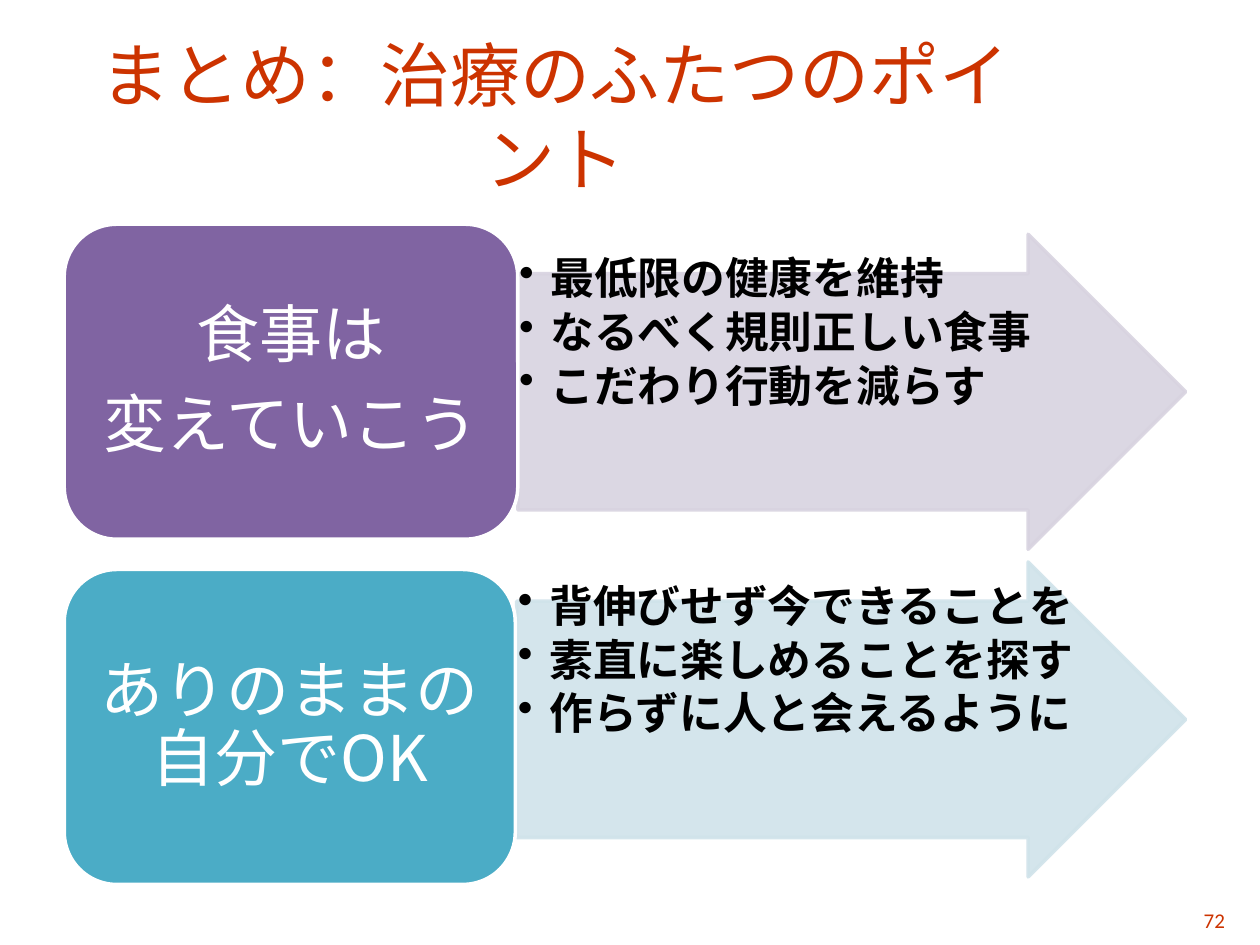
from dataclasses import dataclass

import lxml.etree
import pptx
import pptx.dml.color
import pptx.enum.shapes
import pptx.enum.text
import pptx.oxml.ns
import pptx.util

W, H = 10, 7.5
ALIGN = pptx.enum.text.PP_ALIGN
ANCHOR = pptx.enum.text.MSO_ANCHOR
SHAPE = pptx.enum.shapes.MSO_SHAPE
qn = pptx.oxml.ns.qn


@dataclass(frozen=True)
class Theme:
    accent: str = "CC3300"
    white: str = "FFFFFF"
    black: str = "000000"
    latin: str = "Calibri"
    japanese: str = "Noto Sans CJK JP"
    title: int = 40
    label: int = 36
    bullet: int = 25
    number: int = 12
    line: int = 2
    spacing: float = 0.9


@dataclass(frozen=True)
class Box:
    x: float
    y: float
    w: float
    h: float

    def emu(self) -> list:
        shares = (self.x * W, self.y * H, self.w * W, self.h * H)
        return [pptx.util.Inches(v) for v in shares]


@dataclass(frozen=True)
class Point:
    label: str
    bullets: tuple
    fill: str
    tint: str
    label_box: Box
    arrow_box: Box


T = Theme()
ROW = 2.5 / H
POINTS = (
    Point("食事は\n変えていこう",
          ("最低限の健康を維持", "なるべく規則正しい食事", "こだわり行動を減らす"),
          "8064A2", "D8D3E0",
          Box(0.051, 1.78 / H, 0.36, ROW), Box(0.411, 1.86 / H, 0.53, ROW)),
    Point("ありのままの自分でOK",
          ("背伸びせず今できることを", "素直に楽しめることを探す", "作らずに人と会えるように"),
          "4BACC6", "D0E3EA",
          Box(0.051, 4.52 / H, 0.358, ROW), Box(0.41, 4.46 / H, 0.531, ROW)),
)


def rgb(color: str) -> pptx.dml.color.RGBColor:
    return pptx.dml.color.RGBColor.from_string(color)


def set_insets(tf, side: float, top: float, bottom: float) -> None:
    tf.margin_left = tf.margin_right = pptx.util.Inches(side)
    tf.margin_top = pptx.util.Inches(top)
    tf.margin_bottom = pptx.util.Inches(bottom)


def write(tf, text: str, size: int, color: str, font: str, align,
          anchor, bold: bool = False, after: float = 0,
          spacing: float = 1) -> None:
    tf.text = text
    tf.word_wrap = True
    tf.vertical_anchor = anchor
    for p in tf.paragraphs:
        p.alignment = align
        p.line_spacing = spacing
        p.space_before = pptx.util.Pt(0)
        p.space_after = pptx.util.Pt(after * size)
        for r in p.runs:
            r.font.size = pptx.util.Pt(size)
            r.font.name = font
            r.font.bold = bold
            r.font.color.rgb = rgb(color)


def add_block(s, kind, box: Box, fill: str, line: str):
    sp = s.shapes.add_shape(kind, *box.emu())
    sp.shadow.inherit = False
    sp.fill.solid()
    sp.fill.fore_color.rgb = rgb(fill)
    sp.line.color.rgb = rgb(line)
    sp.line.width = pptx.util.Pt(T.line)
    return sp


def add_arrow(s, point: Point) -> None:
    sp = add_block(s, SHAPE.RIGHT_ARROW, point.arrow_box, point.tint, point.tint)
    sp.adjustments[0], sp.adjustments[1] = 0.75, 0.5
    for color in sp._element.spPr.iter(qn("a:srgbClr")):
        lxml.etree.SubElement(color, qn("a:alpha"), val="90000")


def add_bullets(s, point: Point) -> None:
    tf = s.shapes.add_textbox(*point.arrow_box.emu()).text_frame
    set_insets(tf, 0.01, 0.18, 0.01)
    write(tf, "\n".join(point.bullets), T.bullet, T.black, T.japanese,
          ALIGN.LEFT, ANCHOR.TOP, bold=True, after=0.15, spacing=T.spacing)
    indent = pptx.util.Inches(0.25)
    for p in tf.paragraphs:
        pPr = p._p.get_or_add_pPr()
        pPr.set("marL", str(indent))
        pPr.set("indent", str(-indent))
        lxml.etree.SubElement(pPr, qn("a:buChar"), char="•")


def add_label(s, point: Point) -> None:
    sp = add_block(s, SHAPE.ROUNDED_RECTANGLE, point.label_box, point.fill, T.white)
    set_insets(sp.text_frame, 0.03, 0, 0)
    write(sp.text_frame, point.label, T.label, T.white, T.japanese,
          ALIGN.CENTER, ANCHOR.MIDDLE, after=0.35, spacing=T.spacing)


def main() -> None:
    prs = pptx.Presentation()
    prs.slide_width, prs.slide_height = pptx.util.Inches(W), pptx.util.Inches(H)
    s = prs.slides.add_slide(prs.slide_layouts[5])

    title = s.shapes.title
    title.left, title.top, title.width, title.height = Box(
        0.05, 0.17 / H, 0.781, 0.2).emu()
    write(title.text_frame, "まとめ：治療のふたつのポイント", T.title, T.accent,
          T.latin, ALIGN.CENTER, ANCHOR.MIDDLE)

    for point in POINTS:
        add_arrow(s, point)
        add_bullets(s, point)
        add_label(s, point)

    number = s.shapes.add_textbox(*Box(0.925, 7.1 / H, 0.057, 0.4 / H).emu())
    write(number.text_frame, "72", T.number, T.accent, T.latin,
          ALIGN.RIGHT, ANCHOR.MIDDLE)
    prs.save("out.pptx")


if __name__ == "__main__":
    main()
